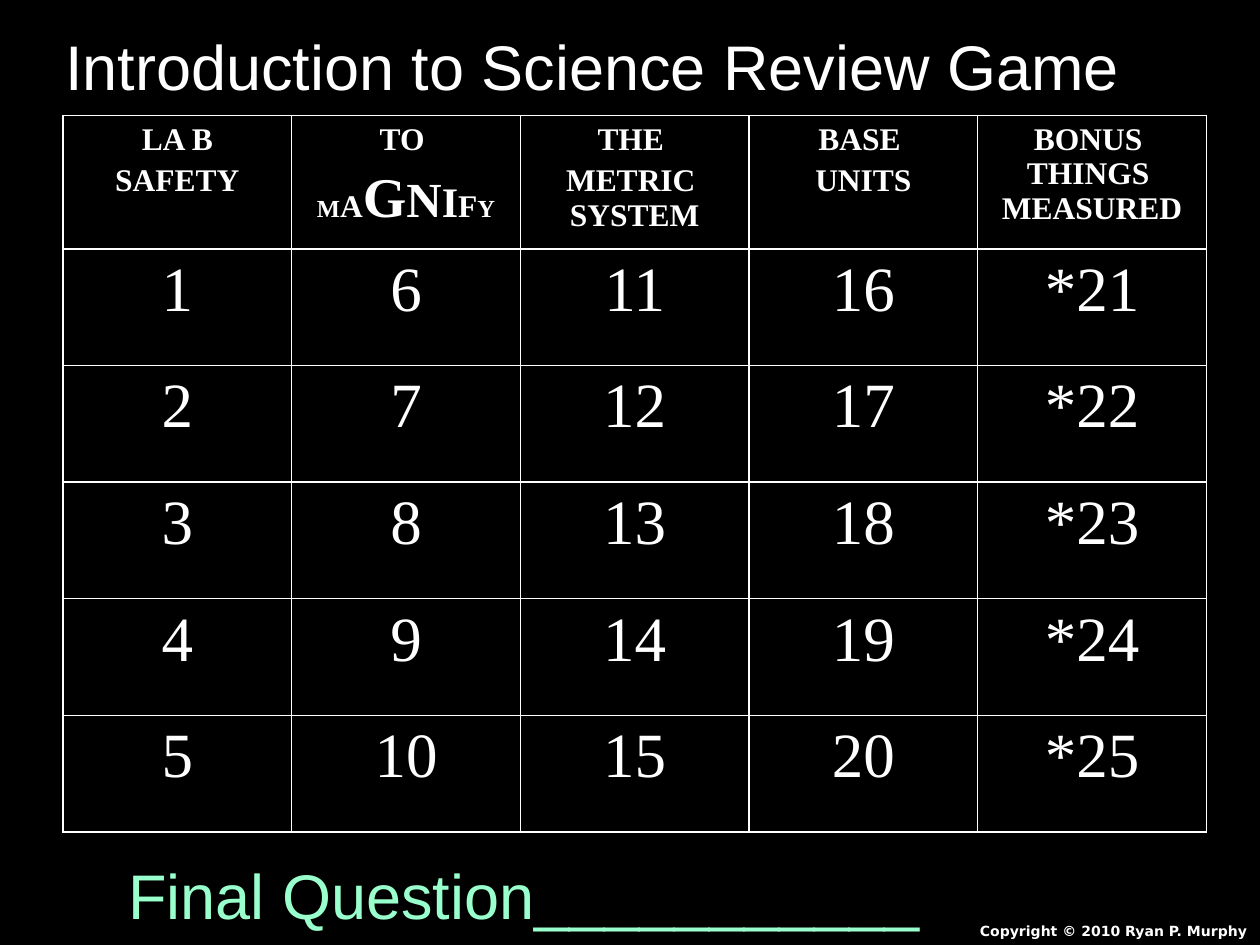
from dataclasses import dataclass

from lxml import etree
from pptx import Presentation
from pptx import util as u
from pptx.dml.color import RGBColor
from pptx.enum import text as tx
from pptx.oxml import ns

HUES = {"back": "000000", "white": "FFFFFF", "mint": "99FFCC"}
SERIF = "Times New Roman"
ROWS, COLS = 5, 5


@dataclass
class Piece:
    text: str
    size: int = 18
    bold: bool = True
    font: str = SERIF
    hue: str = "white"


@dataclass
class Label:
    left: float
    top: float
    width: float
    height: float
    piece: Piece
    align: tx.PP_ALIGN = tx.PP_ALIGN.LEFT


HEADS = [
    [[Piece("LA B")], [Piece("SAFETY")]],
    [[Piece("TO ")],
     [Piece(c, s) for c, s in zip("MAGNIFY", (14, 18, 32, 28, 24, 18, 14))]],
    [[Piece("THE ")], [Piece("METRIC \nSYSTEM")]],
    [[Piece("BASE ")], [Piece("UNITS")]],
    [[Piece("BONUS \nTHINGS \nMEASURED")]],
]

LABELS = [
    Label(17.98, 18.47, 7.42, 0.58,
          Piece("Copyright © 2010 Ryan P. Murphy", 8, True, "DejaVu Sans"),
          tx.PP_ALIGN.RIGHT),
    Label(1.07, 0.43, 21.79, 1.8,
          Piece("Introduction to Science Review Game", 36, False, "Arial")),
    Label(2.34, 17.15, 17.15, 1.78,
          Piece("Final Question___________", 36, False, "Arial", "mint")),
]


def tint(name: str) -> RGBColor:
    return RGBColor.from_string(HUES[name])


def write(para, piece: Piece) -> None:
    for i, line in enumerate(piece.text.split("\n")):
        if i:
            para.add_line_break()
        run = para.add_run()
        run.text = line
        look = {"size": u.Pt(piece.size), "bold": piece.bold, "name": piece.font}
        for key, val in look.items():
            setattr(run.font, key, val)
        run.font.color.rgb = tint(piece.hue)


def edge(cell) -> None:
    props = cell._tc.get_or_add_tcPr()
    for i, side in enumerate(("lnL", "lnR", "lnT", "lnB")):
        line = etree.Element(ns.qn(f"a:{side}"), w=str(u.Pt(1)))
        fill = etree.SubElement(line, ns.qn("a:solidFill"))
        etree.SubElement(fill, ns.qn("a:srgbClr"), val=HUES["white"])
        props.insert(i, line)


def fill_cell(cell, paras: list[list[Piece]]) -> None:
    cell.fill.solid()
    cell.fill.fore_color.rgb = tint("back")
    edge(cell)
    frame = cell.text_frame
    for i, parts in enumerate(paras):
        para = frame.add_paragraph() if i else frame.paragraphs[0]
        para.alignment = tx.PP_ALIGN.CENTER
        if i:
            para.space_before = u.Pt(0.2 * max(p.size for p in parts))
        for part in parts:
            write(para, part)


def draw_board(slide) -> None:
    grid = slide.shapes.add_table(ROWS + 1, COLS, u.Cm(1.27), u.Cm(2.33),
                                  u.Cm(23.07), u.Cm(14.44)).table
    for i, row in enumerate(grid.rows):
        row.height = u.Cm(2.35 if i else 2.69)
    for c, col in enumerate(grid.columns):
        col.width = u.Cm(4.61)
        fill_cell(grid.cell(0, c), HEADS[c])
        star = "*" if c == COLS - 1 else ""
        for r in range(1, ROWS + 1):
            num = Piece(f"{star}{c * ROWS + r}", 36, False)
            fill_cell(grid.cell(r, c), [[num]])


def draw_label(slide, label: Label) -> None:
    box = slide.shapes.add_textbox(u.Cm(label.left), u.Cm(label.top),
                                   u.Cm(label.width), u.Cm(label.height))
    frame = box.text_frame
    look = {"word_wrap": True, "auto_size": tx.MSO_AUTO_SIZE.SHAPE_TO_FIT_TEXT}
    for key, val in look.items():
        setattr(frame, key, val)
    para = frame.paragraphs[0]
    para.alignment = label.align
    write(para, label.piece)


def main() -> None:
    deck = Presentation()
    deck.slide_width, deck.slide_height = u.Cm(25.4), u.Cm(19.05)
    slide = deck.slides.add_slide(deck.slide_layouts[6])
    slide.background.fill.solid()
    slide.background.fill.fore_color.rgb = tint("back")
    draw_board(slide)
    for label in LABELS:
        draw_label(slide, label)
    deck.save("out.pptx")


if __name__ == "__main__":
    main()
